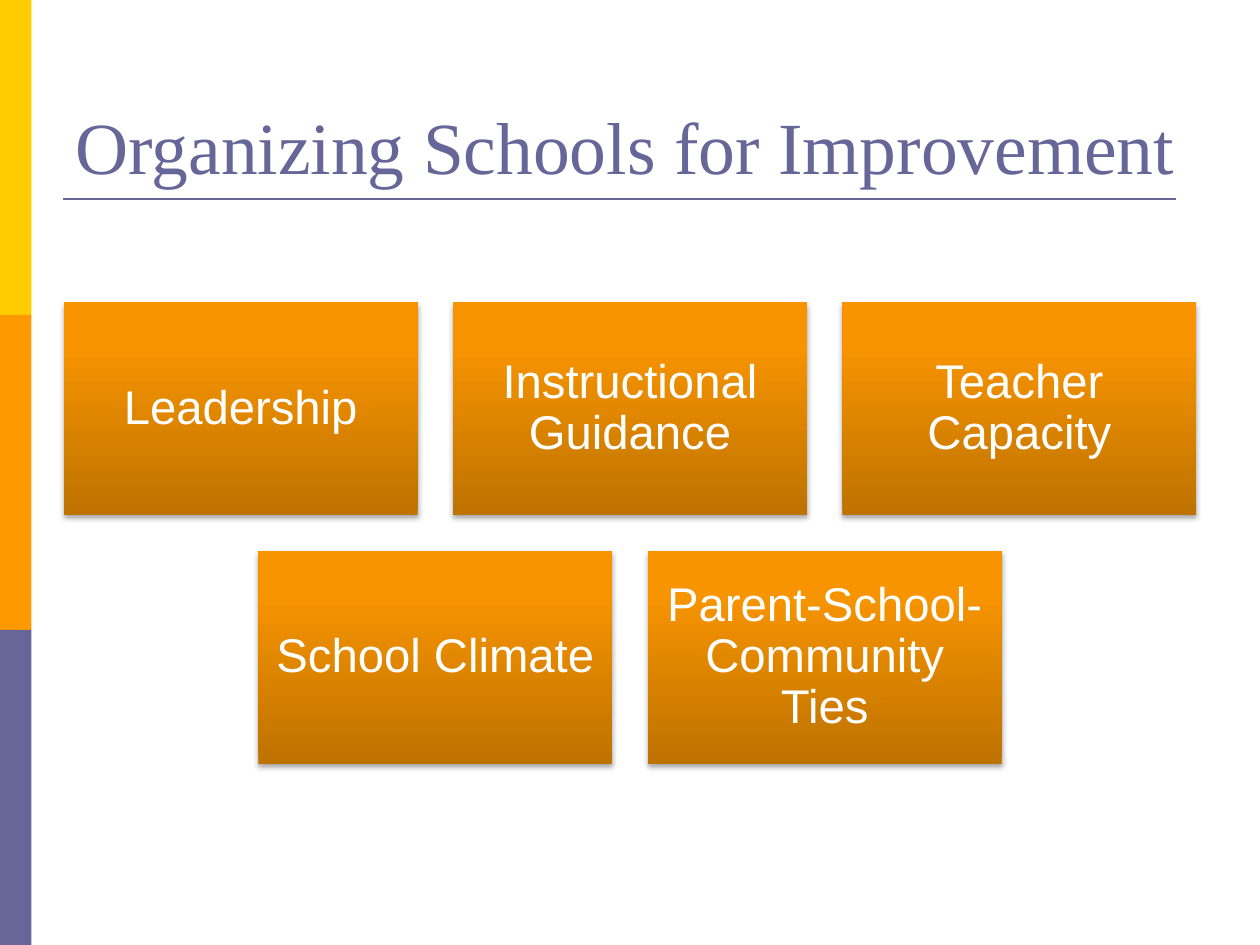
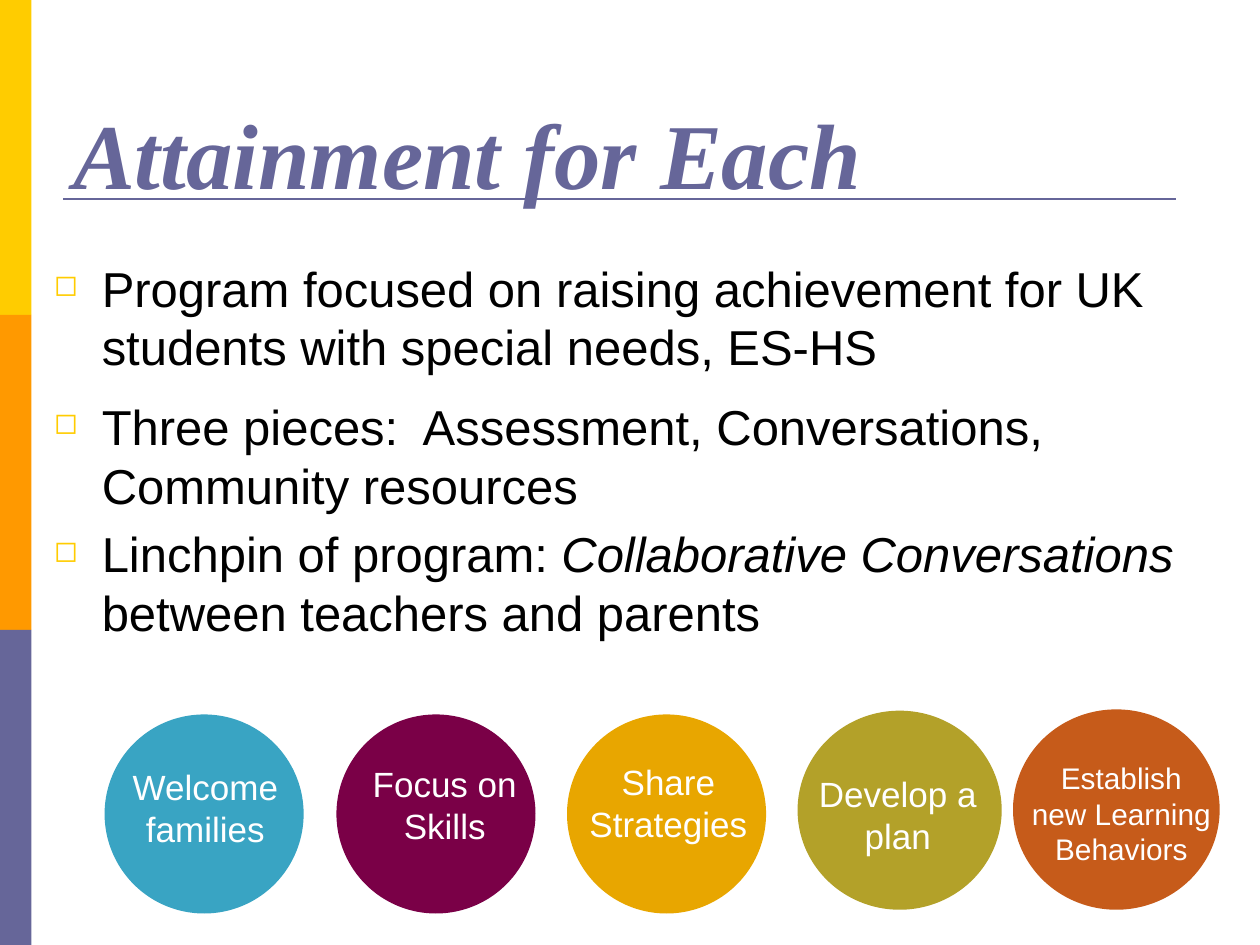
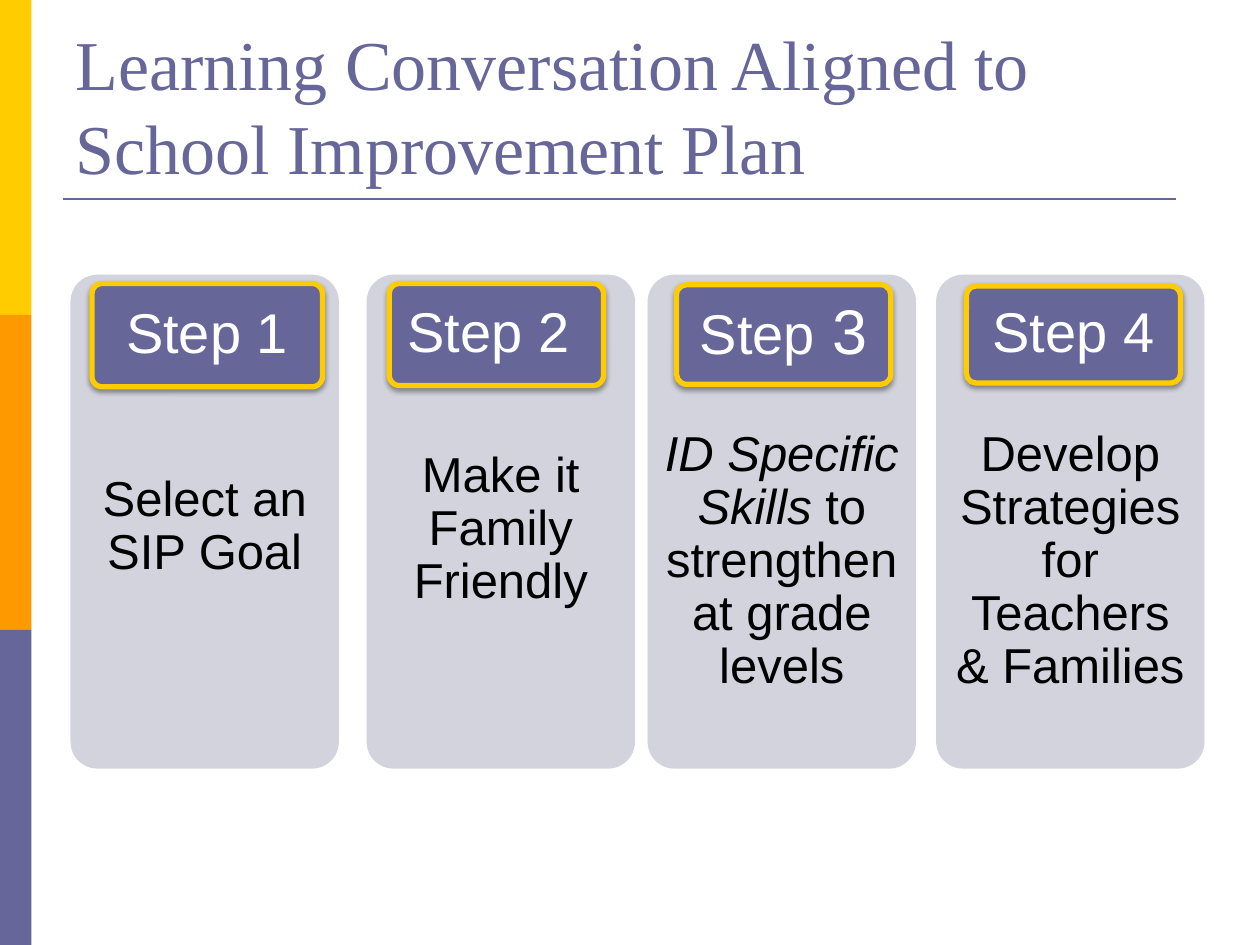
"""Build three slides on school improvement and family conversations."""
import lxml.etree
import pptx
import pptx.dml.color
import pptx.enum.shapes
import pptx.enum.text
import pptx.oxml.ns
import pptx.util

Inches = pptx.util.Inches
Pt = pptx.util.Pt
qn = pptx.oxml.ns.qn
KINDS = pptx.enum.shapes.MSO_SHAPE
ANCHOR = pptx.enum.text.MSO_ANCHOR
ALIGN = pptx.enum.text.PP_ALIGN

COLORS = {
    "yellow": "FFCC00", "orange": "FF9900", "purple": "666699",
    "dark": "BE7200", "bright": "F79400", "card": "D3D3DE",
    "white": "FFFFFF", "black": "000000", "blue": "39A4C3",
    "plum": "7A0047", "gold": "E8A600", "olive": "B3A129", "rust": "C65B1A",
}
TITLE = {"name": "Times New Roman", "size": Pt(42)}
BODY = {"name": "Arial", "size": Pt(28)}
TIGHT = {"alignment": ALIGN.CENTER, "line_spacing": 0.9}

BOXES = [
    ["Leadership", "Instructional Guidance", "Teacher Capacity"],
    ["School Climate", "Parent-School-Community Ties"],
]
POINTS = [
    (6, [("Program focused on raising achievement for UK students "
          "with special needs, ES-HS", {})]),
    (0, [("Three pieces:  Assessment, Conversations, Community resources", {})]),
    (0, [("Linchpin of program: ", {}),
         ("Collaborative Conversations ", {"italic": True}),
         ("between teachers and parents", {})]),
]
CIRCLES = [
    ("blue", (0.83, 5.67, 1.58, 1.58), "Welcome families", (0.64, 6.03, 1.98, 0.77), 20),
    ("plum", (2.67, 5.67, 1.58, 1.58), "Focus on Skills", (2.75, 6, 1.56, 0.77), 20),
    ("gold", (4.5, 5.67, 1.58, 1.58), "Share Strategies", (4.5, 5.99, 1.61, 0.77), 20),
    ("olive", (6.33, 5.64, 1.62, 1.58), "Develop a plan", (6.33, 6.08, 1.59, 0.77), 20),
    ("rust", (8.04, 5.63, 1.64, 1.59), "Establish new Learning Behaviors",
     (8.08, 5.98, 1.64, 0.96), 17),
]
STEPS = [
    (0.56, 0.2, [("Select an SIP Goal", {})],
     (0.73, 2.25, 1.83, 0.82), [("Step 1", {})]),
    (2.91, 0.24, [("Make it Family Friendly", {})],
     (3.09, 2.25, 1.7, 0.81), [("Step 2 ", {})]),
    (5.14, 0.75, [("ID Specific Skills ", {"italic": True}),
                  ("to strengthen at grade levels", {})],
     (5.37, 2.26, 1.7, 0.79), [("Step", {}), (" 3", {"size": Pt(36)})]),
    (7.43, 0.75, [("Develop Strategies for Teachers & Families", {})],
     (7.67, 2.27, 1.7, 0.77), [("Step 4", {})]),
]


def tint(name):
    """Return a named colour."""
    return pptx.dml.color.RGBColor.from_string(COLORS[name])


def assign(item, values):
    """Set attributes of an item from a dict."""
    for key, value in values.items():
        setattr(item, key, value)


def place(at):
    """Turn inches into lengths."""
    return [Inches(n) for n in at]


def write(para, runs, font, color, form):
    """Fill a paragraph with formatted runs."""
    assign(para, form)
    for text, extra in runs:
        run = para.add_run()
        run.text = text
        assign(run.font, {**font, **extra})
        run.font.color.rgb = tint(color)


def frame(shape, anchor, pads):
    """Set wrap, anchor and margins, and return the text frame."""
    sides = ("margin_left", "margin_top", "margin_right", "margin_bottom")
    area = shape.text_frame
    assign(area, {"word_wrap": True, "vertical_anchor": anchor,
                  "auto_size": pptx.enum.text.MSO_AUTO_SIZE.NONE,
                  **dict(zip(sides, place(pads)))})
    return area


def add_block(slide, kind, at, color):
    """Add a plain filled shape."""
    shape = slide.shapes.add_shape(kind, *place(at))
    shape.shadow.inherit = False
    shape.fill.solid()
    shape.fill.fore_color.rgb = tint(color)
    shape.line.fill.background()
    return shape


def add_shade(shape, alpha, gap):
    """Give a shape a soft shadow below it."""
    effects = shape._element.spPr.find(qn("a:effectLst"))
    outer = lxml.etree.SubElement(
        effects, qn("a:outerShdw"), blurRad=str(Pt(3.1)), dist=str(Pt(gap)),
        dir="5400000", rotWithShape="0")
    color = lxml.etree.SubElement(outer, qn("a:srgbClr"), val=COLORS["black"])
    lxml.etree.SubElement(color, qn("a:alpha"), val=str(alpha * 1000))


def add_label(slide, at, runs, size):
    """Add a centred white text box."""
    box = slide.shapes.add_textbox(*place(at))
    area = frame(box, ANCHOR.TOP, (0.1, 0.05, 0.1, 0.05))
    write(area.paragraphs[0], runs, {**BODY, "size": Pt(size)}, "white",
          {"alignment": ALIGN.CENTER})


def add_page(deck, text, at=(0.5, 0.3, 9, 1.25), **font):
    """Add a slide with side bands, rule and title."""
    slide = deck.slides.add_slide(deck.slide_layouts[5])
    for row, color in enumerate(("yellow", "orange", "purple")):
        add_block(slide, KINDS.RECTANGLE, (0, row * 2.5, 0.25, 2.5), color)
    rule = slide.shapes.add_connector(
        pptx.enum.shapes.MSO_CONNECTOR.STRAIGHT, *place((0.5, 1.58, 9.33, 1.58)))
    rule.line.color.rgb = tint("purple")
    rule.line.width = Pt(1.5)
    lxml.etree.SubElement(rule._element.spPr, qn("a:effectLst"))
    title = slide.shapes.title
    assign(title, dict(zip(("left", "top", "width", "height"), place(at))))
    area = frame(title, ANCHOR.BOTTOM, (0.1, 0.05, 0.1, 0.05))
    write(area.paragraphs[0], [(text, {})], {**TITLE, **font}, "purple",
          {"alignment": ALIGN.LEFT})
    return slide


def add_grid(slide):
    """Add centred rows of shaded boxes."""
    wide, high, gap = 2.81, 1.69, 0.28
    for row, names in enumerate(BOXES):
        left = 5 - (len(names) * (wide + gap) - gap) / 2
        for col, name in enumerate(names):
            at = (left + col * (wide + gap), 2.4 + row * (high + gap), wide, high)
            box = add_block(slide, KINDS.RECTANGLE, at, "bright")
            box.fill.gradient()
            box.fill.gradient_angle = 90
            stops = zip(box.fill.gradient_stops, (("dark", 0), ("bright", 0.8)))
            for stop, (color, spot) in stops:
                stop.color.rgb = tint(color)
                stop.position = spot
            add_shade(box, 35, 1.8)
            area = frame(box, ANCHOR.MIDDLE, [0.11] * 4)
            write(area.paragraphs[0], [(name, {})], {**BODY, "size": Pt(27)},
                  "white", TIGHT)


def add_points(slide):
    """Add the bulleted list."""
    box = slide.shapes.add_textbox(*place((0.33, 2, 9.16, 3.36)))
    area = frame(box, ANCHOR.TOP, (0.1, 0.05, 0.1, 0.05))
    for row, (after, runs) in enumerate(POINTS):
        para = area.add_paragraph() if row else area.paragraphs[0]
        write(para, runs, BODY, "black",
              {"space_before": Pt(5.6), "space_after": Pt(after)})
        props = para._p.get_or_add_pPr()
        props.set("marL", str(Inches(0.38)))
        props.set("indent", str(Inches(-0.38)))
        color = lxml.etree.SubElement(props, qn("a:buClr"))
        lxml.etree.SubElement(color, qn("a:srgbClr"), val=COLORS["yellow"])
        lxml.etree.SubElement(props, qn("a:buSzPct"), val="60000")
        lxml.etree.SubElement(props, qn("a:buChar"), char="◻")


def add_step(slide, left, pad, runs, at, head):
    """Add a step card with its heading."""
    card = add_block(slide, KINDS.ROUNDED_RECTANGLE, (left, 2.18, 2.13, 3.92), "card")
    area = frame(card, ANCHOR.MIDDLE, (0.06, pad, 0.06, 0.12))
    write(area.paragraphs[0], runs, BODY, "black", TIGHT)
    tab = add_block(slide, KINDS.ROUNDED_RECTANGLE, at, "purple")
    tab.line.color.rgb = tint("yellow")
    tab.line.width = Pt(3)
    add_shade(tab, 38, 1.6)
    area = frame(tab, ANCHOR.MIDDLE, (0.07, 0.05, 0.07, 0.05))
    write(area.paragraphs[0], head, {**BODY, "size": Pt(32)}, "white", TIGHT)
    for shape in (card, tab):
        shape.adjustments[0] = 0.1


def main():
    """Build and save the deck."""
    deck = pptx.Presentation()
    assign(deck, {"slide_width": Inches(10), "slide_height": Inches(7.5)})

    add_grid(add_page(deck, "Organizing Schools for Improvement"))

    slide = add_page(deck, "Attainment for Each", (0.48, 0.45, 9, 1.25),
                     size=Pt(53), bold=True, italic=True)
    add_points(slide)
    for color, at, text, spot, size in CIRCLES:
        add_block(slide, KINDS.OVAL, at, color)
        add_label(slide, spot, [(text, {})], size)

    slide = add_page(deck, "Learning Conversation Aligned to School Improvement Plan",
                     size=Pt(40))
    for step in STEPS:
        add_step(slide, *step)

    deck.save("out.pptx")


if __name__ == "__main__":
    main()
